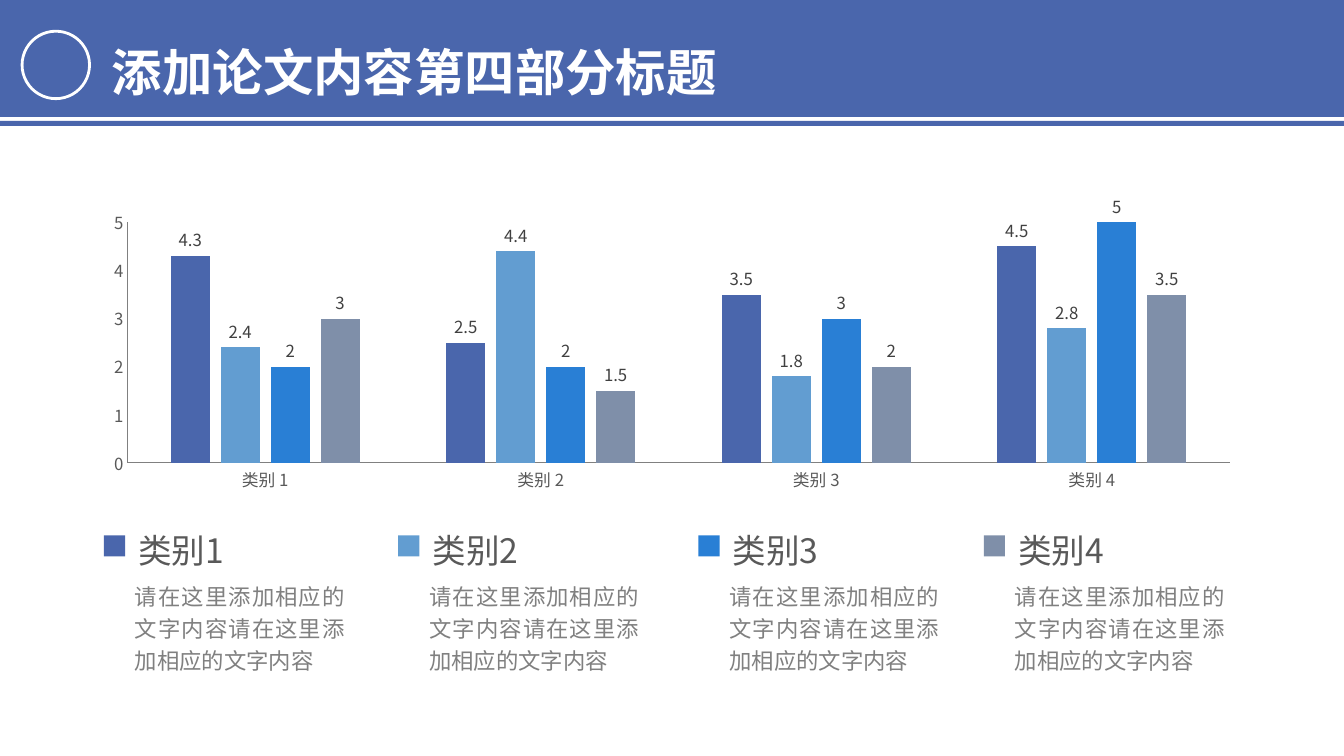
from dataclasses import dataclass
from lxml.etree import SubElement as Sub
from pptx import Presentation
from pptx.chart.data import CategoryChartData as Data
from pptx.dml.color import RGBColor as RGB
from pptx.enum.chart import XL_CHART_TYPE as Kind, XL_LABEL_POSITION as Spot
from pptx.enum.chart import XL_TICK_MARK as Tick
from pptx.enum.shapes import MSO_SHAPE as Form
from pptx.enum.text import MSO_ANCHOR as Anchor, MSO_AUTO_SIZE as Fit, PP_ALIGN as Align
from pptx.oxml import parse_xml
from pptx.oxml.ns import qn
from pptx.util import Pt

CHART_NS = "http://schemas.openxmlformats.org/drawingml/2006/chart"


@dataclass(frozen=True)
class Theme:
    font: str = "Noto Sans CJK SC"
    main: str = "4A66AC"
    white: str = "FFFFFF"
    dark: str = "595959"
    label: str = "404040"
    gray: str = "808080"
    bars: tuple = ("4A66AC", "629DD1", "297FD5", "7F8FA9")
    title: int = 36
    head: int = 24
    body: int = 16
    small: int = 12


def style(font, face, size, color, bold=False):
    font.name, font.size, font.bold = face, Pt(size), bold
    font.color.rgb = RGB.from_string(color)


def write(frame, text, face, size, color, bold=False, align=Align.LEFT,
          space=None, anchor=Anchor.TOP, inset=(7.2, 3.6), fit=Fit.NONE):
    frame.word_wrap = True
    frame.auto_size = fit
    frame.vertical_anchor = anchor
    frame.margin_left = frame.margin_right = Pt(inset[0])
    frame.margin_top = frame.margin_bottom = Pt(inset[1])
    para = frame.paragraphs[0]
    para.alignment, para.line_spacing = align, space
    run = para.add_run()
    run.text = text
    style(run.font, face, size, color, bold)
    Sub(run.font._element, qn("a:ea"), typeface=face)


class Page:
    def __init__(self, deck, theme):
        self.theme = theme
        self.slide = deck.slides.add_slide(deck.slide_layouts[5])
        self.shapes = self.slide.shapes

    def title(self, text, *box):
        item = self.shapes.title
        item.left, item.top, item.width, item.height = map(Pt, box)
        write(item.text_frame, text, self.theme.font, self.theme.title,
              self.theme.white, bold=True, space=1.5, fit=Fit.SHAPE_TO_FIT_TEXT)
        item.element.getparent().append(item.element)

    def shape(self, form, color, *box, line=None):
        item = self.shapes.add_shape(form, *map(Pt, box))
        item.shadow.inherit = False
        item.fill.solid()
        item.fill.fore_color.rgb = RGB.from_string(color)
        if line:
            item.line.color.rgb = RGB.from_string(line)
            item.line.width = Pt(2)
        else:
            item.line.fill.background()

    def text(self, text, *box, **look):
        item = self.shapes.add_textbox(*map(Pt, box))
        write(item.text_frame, text, self.theme.font, **look)

    def axis(self, axis):
        axis.has_major_gridlines = False
        axis.major_tick_mark = axis.minor_tick_mark = Tick.NONE
        axis.format.line.color.rgb = RGB.from_string(self.theme.gray)
        axis.format.line.width = Pt(0.75)
        style(axis.tick_labels.font, self.theme.font, self.theme.small, self.theme.dark)

    def chart(self, names, rows, *box):
        data = Data()
        data.categories = names
        for num, row in enumerate(rows, 1):
            data.add_series(f"Series {num}", row)
        chart = self.shapes.add_chart(Kind.COLUMN_CLUSTERED, *map(Pt, box), data).chart
        chart.has_title = chart.has_legend = False
        style(chart.font, self.theme.font, 10, "000000")
        self.axis(chart.category_axis)
        self.axis(chart.value_axis)
        scale = chart.value_axis
        scale.minimum_scale, scale.maximum_scale, scale.major_unit = 0, 5, 1
        plot = chart.plots[0]
        plot.gap_width, plot.overlap, plot.vary_by_categories = 219, -27, False
        for bars, color in zip(plot.series, self.theme.bars):
            bars.format.fill.solid()
            bars.format.fill.fore_color.rgb = RGB.from_string(color)
            tags = bars.data_labels
            tags.show_value, tags.position = True, Spot.OUTSIDE_END
            style(tags.font, self.theme.font, self.theme.small, self.theme.label)
        self.inner(chart, x=0.03, y=0.09, w=0.95, h=0.8)

    def inner(self, chart, **parts):
        area = chart.element.find(".//" + qn("c:plotArea"))
        for old in area.findall(qn("c:layout")):
            area.remove(old)
        modes = '<c:xMode val="edge"/><c:yMode val="edge"/>'
        sizes = "".join(f'<c:{key} val="{val}"/>' for key, val in parts.items())
        area.insert(0, parse_xml(
            f'<c:layout xmlns:c="{CHART_NS}"><c:manualLayout>'
            f'<c:layoutTarget val="inner"/>{modes}{sizes}</c:manualLayout></c:layout>'))

    def entry(self, name, note, color, left, width):
        look = self.theme
        self.text(name, left, 365, width, 56.2, size=look.head, color=look.dark,
                  anchor=Anchor.MIDDLE, inset=(9.4, 5))
        self.text(note, left, 409, 164.2, 77, size=look.body, color=look.gray,
                  align=Align.JUSTIFY, space=1.2, fit=Fit.SHAPE_TO_FIT_TEXT)
        self.shape(Form.RECTANGLE, color, left - 15.1, 382.4, 15.1, 15.1)


def main():
    deck = Presentation()
    deck.slide_width, deck.slide_height = Pt(960), Pt(540)
    theme = Theme()
    page = Page(deck, theme)
    page.shape(Form.RECTANGLE, theme.main, 0, 0, 960, 83.5)
    page.shape(Form.RECTANGLE, theme.main, 0, 86.4, 960, 3.6)
    rows = [(4.3, 2.5, 3.5, 4.5), (2.4, 4.4, 1.8, 2.8), (2, 2, 3, 5), (3, 1.5, 2, 3.5)]
    page.chart([f"类别 {num}" for num in range(1, 5)], rows, 66.2, 138.2, 828.7, 216)
    note = "请在这里添加相应的文字内容" * 2
    spots = [(89.3, 303), (299.5, 303), (514, 303), (717.8, 105)]
    for num, (color, spot) in enumerate(zip(theme.bars, spots), 1):
        page.entry(f"类别{num}", note, color, *spot)
    page.shape(Form.OVAL, theme.main, 15.8, 22.3, 48.2, 48.2, line=theme.white)
    page.title("添加论文内容第四部分标题", 72.7, 4.3, 449.3, 66.2)
    deck.save("out.pptx")


if __name__ == "__main__":
    main()
